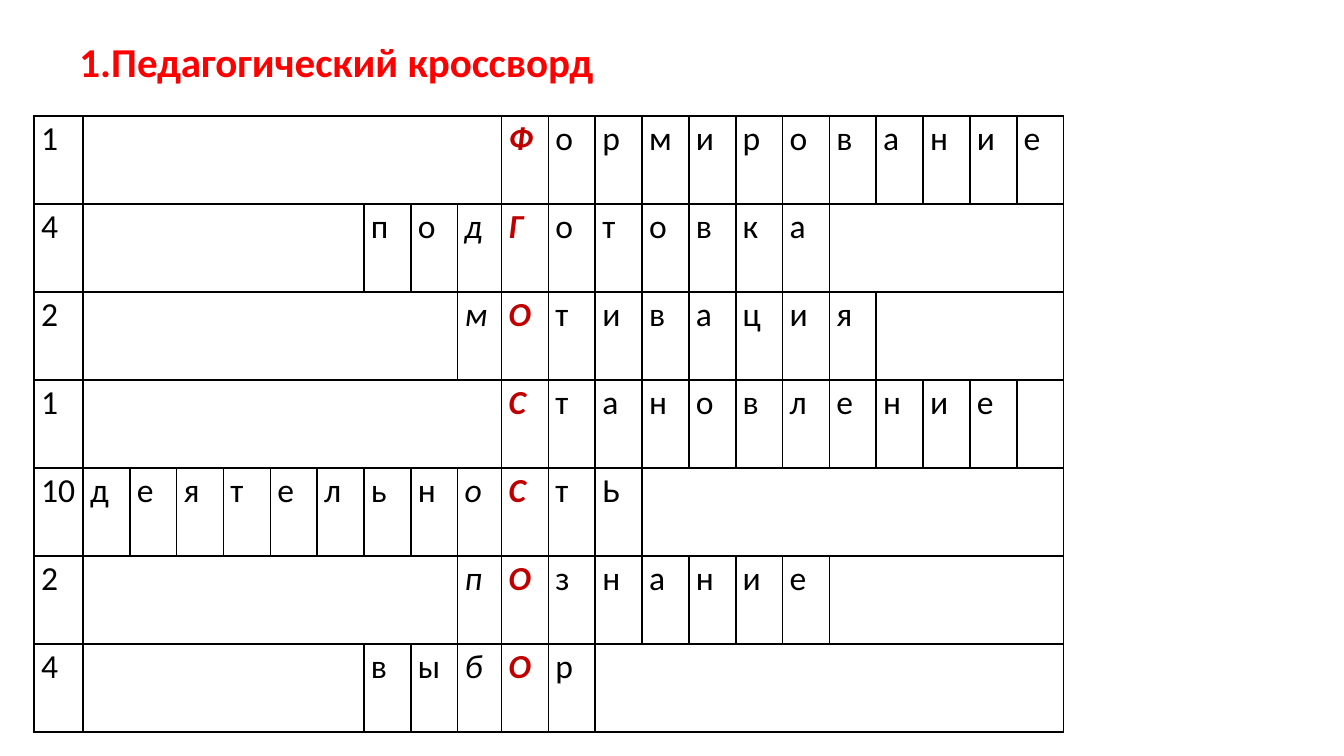
from lxml.etree import SubElement
from pptx import Presentation
from pptx.dml.color import RGBColor
from pptx.enum.text import MSO_ANCHOR as Anchor, MSO_AUTO_SIZE as AutoSize, PP_ALIGN as Align
from pptx.oxml.ns import qn
from pptx.util import Emu, Pt

PX = 914400 / 134.4
BLACK = RGBColor(0x00, 0x00, 0x00)
RED = RGBColor(0xFF, 0x00, 0x00)
DARK_RED = RGBColor(0xC0, 0x00, 0x00)
FONT = "Calibri"

# Each row: number, letters before the key column, letters from the key column on
WORDS = [
    ("1", "", "Формирование"),
    ("4", "под", "Готовка"),
    ("2", "м", "Отивация"),
    ("1", "", "Становление"),
    ("10", "деятельно", "СтЬ"),
    ("2", "п", "Ознание"),
    ("4", "выб", "Ор"),
]
COLUMNS = 22
KEY = 10
TABLE_WIDTH, ROW_HEIGHT = 1030, 88
SPECIAL_WIDTHS = {0: 49, KEY - 1: 44}


def px(length):
    return Emu(round(length * PX))


def write(frame, text, size=18, color=BLACK, bold=False, italic=False,
          align=Align.LEFT, spacing=1.0):
    para = frame.paragraphs[0]
    para.alignment = align
    para.line_spacing = spacing
    span = para.add_run()
    span.text = text
    font = span.font
    font.name, font.size = FONT, Pt(size)
    font.bold, font.italic = bold, italic
    font.color.rgb = color


def add_title(page, text):
    title = page.shapes.title
    title.left, title.top, title.width, title.height = px(34), px(20), px(605), px(83)
    frame = title.text_frame
    frame.auto_size = AutoSize.NONE
    frame.word_wrap = True
    frame.vertical_anchor = Anchor.MIDDLE
    write(frame, text, size=22, color=RED, bold=True, align=Align.CENTER)


def format_cell(cell):
    cell.margin_left = cell.margin_right = px(7)
    cell.margin_top = cell.margin_bottom = 0
    properties = cell._tc.get_or_add_tcPr()
    for side in ("lnL", "lnR", "lnT", "lnB"):
        line = SubElement(properties, qn(f"a:{side}"), w=str(Pt(1)))
        fill = SubElement(line, qn("a:solidFill"))
        SubElement(fill, qn("a:srgbClr"), val=str(BLACK))
    cell.fill.background()


def merge_blank(table, row, first, last):
    if first < last:
        table.cell(row, first).merge(table.cell(row, last))


def fill_row(table, row, number, before, after):
    start = KEY - len(before)
    end = KEY + len(after)
    write(table.cell(row, 0).text_frame, number, spacing=1.07)
    for column, letter in enumerate(before + after, start):
        is_key = column == KEY
        write(table.cell(row, column).text_frame, letter, spacing=1.07,
              color=DARK_RED if is_key else BLACK, bold=is_key,
              italic=column in (KEY - 1, KEY))
    merge_blank(table, row, 1, start - 1)
    merge_blank(table, row, end, COLUMNS - 1)


def add_crossword(page):
    frame = page.shapes.add_table(len(WORDS), COLUMNS, px(34), px(116),
                                  px(TABLE_WIDTH), px(ROW_HEIGHT * len(WORDS)))
    table = frame.table
    table.first_row = table.horz_banding = False

    # Letter columns share the width left by the special ones
    letter_width = ((TABLE_WIDTH - sum(SPECIAL_WIDTHS.values()))
                    / (COLUMNS - len(SPECIAL_WIDTHS)))
    for index, column in enumerate(table.columns):
        column.width = px(SPECIAL_WIDTHS.get(index, letter_width))
    for row in table.rows:
        row.height = px(ROW_HEIGHT)
    for cell in table.iter_cells():
        format_cell(cell)
    for row, word in enumerate(WORDS):
        fill_row(table, row, *word)


def main():
    deck = Presentation()
    deck.slide_width, deck.slide_height = px(1344), px(756)
    page = deck.slides.add_slide(deck.slide_layouts[5])
    add_title(page, "1.Педагогический кроссворд")
    add_crossword(page)
    deck.save("out.pptx")


if __name__ == "__main__":
    main()
